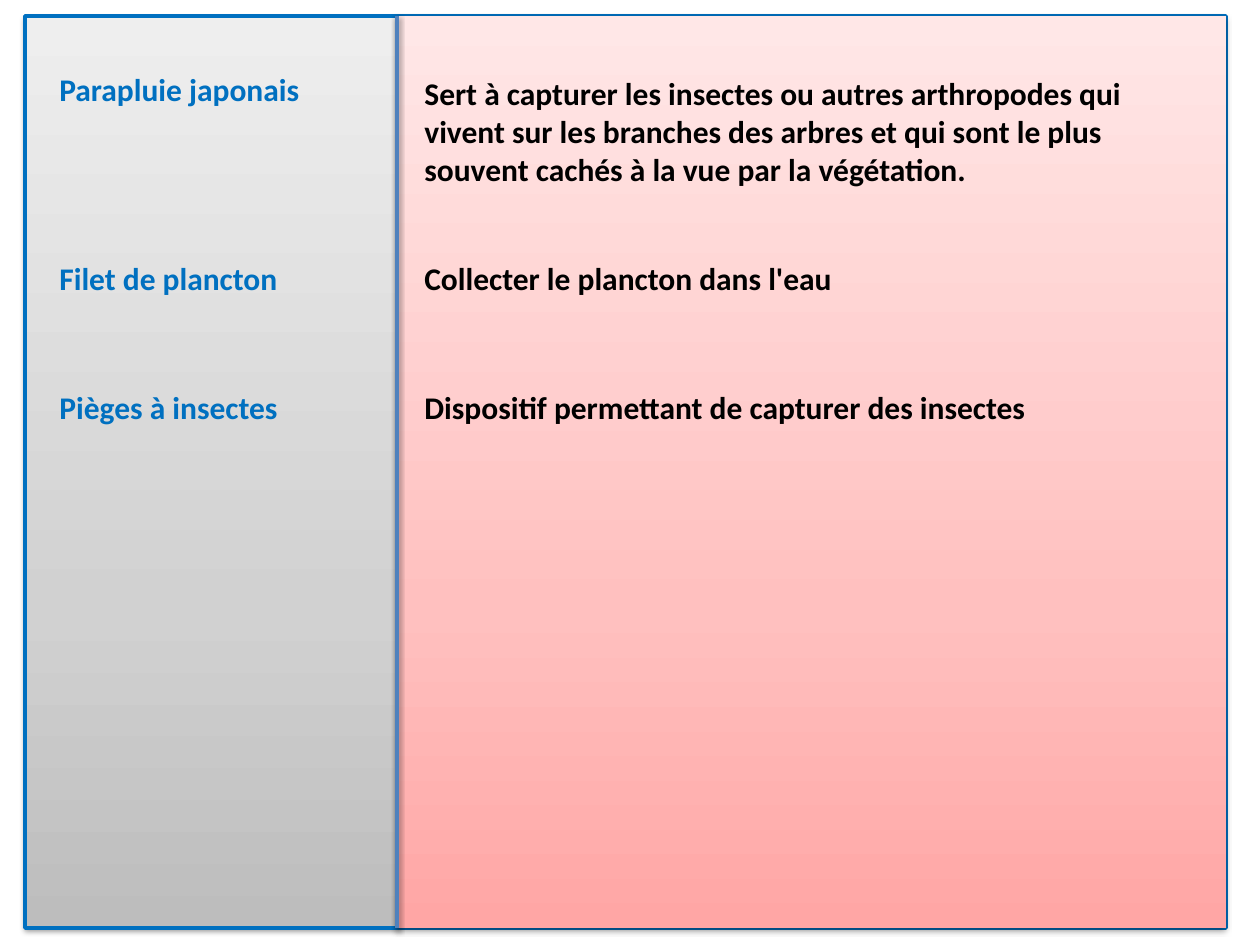
from copy import deepcopy
from dataclasses import dataclass

from lxml import etree
from pptx import Presentation
from pptx import util as u
from pptx.dml.color import RGBColor
from pptx.enum import shapes, text
from pptx.oxml.ns import qn

PX_PER_INCH = 126


def px(length):
    return u.Emu(round(length * 914400 / PX_PER_INCH))


@dataclass(frozen=True)
class Theme:
    font: str = "Calibri"
    size: int = 18
    line_width: int = 2
    term: str = "0070C0"
    definition: str = "000000"
    frame: str = "0070C0"
    divider: str = "4F81BD"
    shadow: str = "000000"
    grey: tuple = ((0, "BDBDBD"), (0.35, "D1D1D1"), (1, "EEEEEE"))
    pink: tuple = ((0, "FFA6A5"), (0.35, "FFC0BF"), (1, "FFE7E7"))


class Builder:
    def __init__(self, slide, theme):
        self.slide = slide
        self.theme = theme

    def _rectangle(self, left, top, width, height):
        shape = self.slide.shapes.add_shape(
            shapes.MSO_SHAPE.RECTANGLE, px(left), px(top), px(width), px(height))
        shape.shadow.inherit = False
        return shape

    def _style_line(self, line, color):
        line.color.rgb = RGBColor.from_string(color)
        line.width = u.Pt(self.theme.line_width)

    def _drop_shadow(self, properties):
        """Put a soft downward shadow in the effect list, adding the list if needed."""
        effects = properties.find(qn("a:effectLst"))
        if effects is None:
            effects = etree.SubElement(properties, qn("a:effectLst"))
        shadow = etree.SubElement(
            effects, qn("a:outerShdw"), blurRad=str(u.Pt(3.1)),
            dist=str(u.Pt(1.6)), dir="5400000", rotWithShape="0")
        color = etree.SubElement(shadow, qn("a:srgbClr"), val=self.theme.shadow)
        etree.SubElement(color, qn("a:alpha"), val="38000")

    def panel(self, left, top, width, height, stops):
        """Add a shadowed rectangle whose three-stop gradient runs upwards."""
        shape = self._rectangle(left, top, width, height)
        shape.line.fill.background()
        shape.fill.gradient()
        shape.fill.gradient_angle = 90
        stop_list = shape.element.spPr.find(".//" + qn("a:gsLst"))
        stop_list.append(deepcopy(stop_list[0]))
        for stop, (position, color) in zip(shape.fill.gradient_stops, stops):
            stop.position = position
            stop.color.rgb = RGBColor.from_string(color)
        self._drop_shadow(shape.element.spPr)

    def frame(self, left, top, width, height):
        shape = self._rectangle(left, top, width, height)
        shape.fill.background()
        self._style_line(shape.line, self.theme.frame)

    def divider(self, x, top, bottom):
        connector = self.slide.shapes.add_connector(
            shapes.MSO_CONNECTOR.STRAIGHT, px(x), px(top), px(x), px(bottom))
        self._style_line(connector.line, self.theme.divider)
        self._drop_shadow(connector.element.spPr)

    def label(self, left, top, width, height, wording, color, wrap=False):
        box = self.slide.shapes.add_textbox(px(left), px(top), px(width), px(height))
        frame = box.text_frame
        frame.word_wrap = wrap
        frame.auto_size = text.MSO_AUTO_SIZE.SHAPE_TO_FIT_TEXT
        run = frame.paragraphs[0].add_run()
        run.text = wording
        run.font.name = self.theme.font
        run.font.size = u.Pt(self.theme.size)
        run.font.bold = True
        run.font.color.rgb = RGBColor.from_string(color)


def main():
    presentation = Presentation()
    presentation.slide_width, presentation.slide_height = px(1260), px(945)
    slide = presentation.slides.add_slide(presentation.slide_layouts[6])
    theme = Theme()
    builder = Builder(slide, theme)

    left, top, height = 25, 16, 912
    middle, right = 397, 1226
    builder.panel(left, top, middle - left, height, theme.grey)
    builder.frame(left, top, right - left, height)
    builder.panel(middle, top, right - middle, height, theme.pink)
    builder.divider(middle, top, top + height)

    term_left, definition_left, line_height = 47, 412, 50
    terms = [
        (64, 267, "Parapluie japonais"),
        (253, 246, "Filet de plancton"),
        (382, 246, "Pièges à insectes"),
    ]
    for y, width, wording in terms:
        builder.label(term_left, y, width, line_height, wording, theme.term)

    builder.label(
        definition_left, 68, 774, 127,
        "Sert à capturer les insectes ou autres arthropodes qui vivent sur les "
        "branches des arbres et qui sont le plus souvent cachés à la vue par la "
        "végétation.", theme.definition, wrap=True)
    definitions = [
        (253, 444, "Collecter le plancton dans l'eau"),
        (382, 639, "Dispositif permettant de capturer des insectes"),
    ]
    for y, width, wording in definitions:
        builder.label(definition_left, y, width, line_height, wording, theme.definition)

    presentation.save("out.pptx")


if __name__ == "__main__":
    main()
